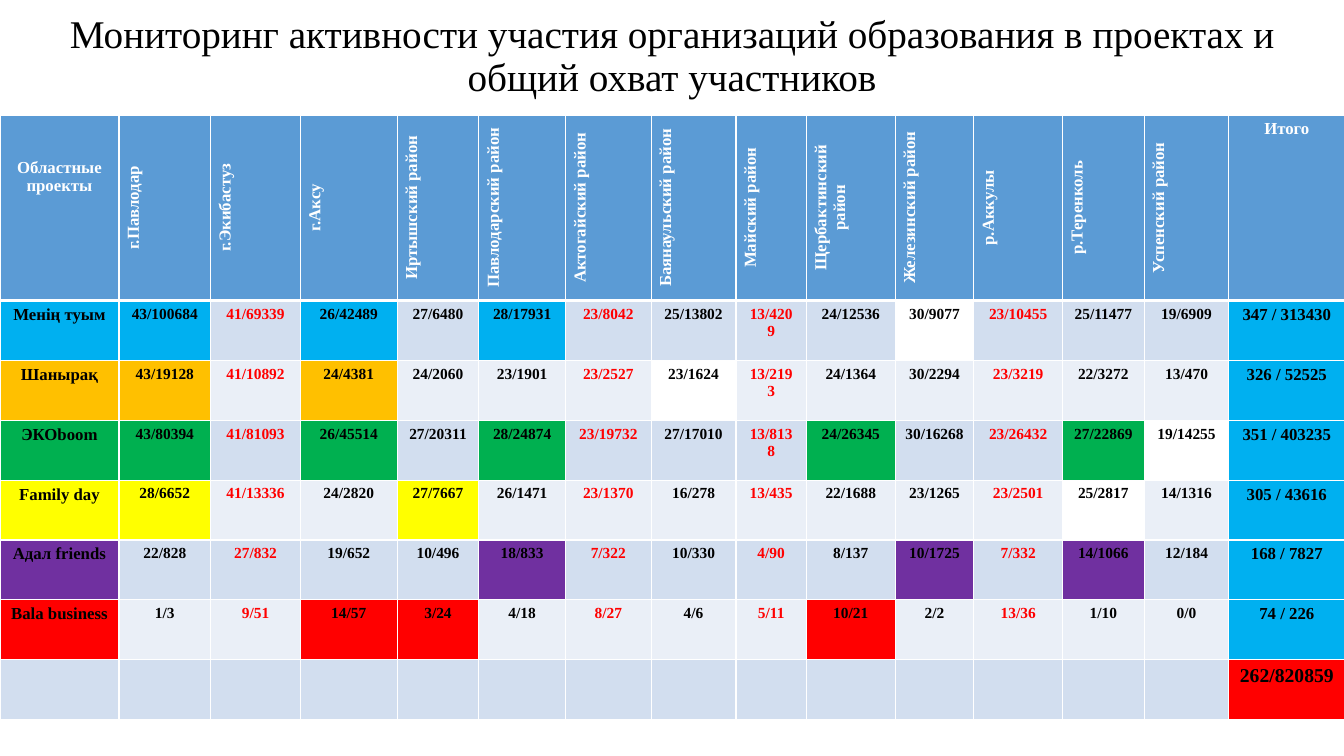
from dataclasses import dataclass

from lxml import etree
from pptx import Presentation
from pptx import util as u
from pptx.dml import color
from pptx.enum import text
from pptx.oxml import ns


@dataclass(frozen=True)
class Theme:
    font: str = "Times New Roman"
    title_size: int = 28
    label_size: int = 12
    value_size: int = 11
    grand_size: int = 14
    black: str = "000000"
    white: str = "FFFFFF"
    red: str = "FF0000"
    header: str = "5B9BD5"
    total: str = "00B0F0"
    bands: tuple = ("D2DEEF", "EAEFF7")


THEME = Theme()
TITLE = "Мониторинг активности участия организаций образования в проектах и общий охват участников"
CORNER = "Областные проекты"
TOTAL = "Итого"
GRAND_TOTAL = "262/820859"
DISTRICTS = [
    "г.Павлодар", "г.Экибастуз", "г.Аксу", "Иртышский район", "Павлодарский район",
    "Актогайский район", "Баянаульский район", "Майский район", "Щербактинский район",
    "Железинский район", "р.Аккулы", "р.Теренколь", "Успенский район",
]
RED_COLUMNS = {2, 6, 8, 11}
COLUMN_WIDTHS = [1.18, 0.91, 0.89, 0.96, 0.81, 0.86, 0.85, 0.84, 0.7, 0.88, 0.78, 0.88, 0.81, 0.84, 1.15]
HEADER_HEIGHT = 1.31
ROW_HEIGHT = 0.594


@dataclass(frozen=True)
class Project:
    name: str
    fill: str
    leaders: set
    blank: set
    values: str
    total: str


PROJECTS = [
    Project("Менің туым", "00B0F0", {1, 3, 5}, {10},
            "43/100684 41/69339 26/42489 27/6480 28/17931 23/8042 25/13802 "
            "13/4209 24/12536 30/9077 23/10455 25/11477 19/6909", "347 / 313430"),
    Project("Шанырақ", "FFC000", {1, 3}, {7},
            "43/19128 41/10892 24/4381 24/2060 23/1901 23/2527 23/1624 "
            "13/2193 24/1364 30/2294 23/3219 22/3272 13/470", "326 / 52525"),
    Project("ЭКОboom", "00B050", {1, 3, 5, 9, 12}, {13},
            "43/80394 41/81093 26/45514 27/20311 28/24874 23/19732 27/17010 "
            "13/8138 24/26345 30/16268 23/26432 27/22869 19/14255", "351 / 403235"),
    Project("Family day", "FFFF00", {1, 4}, {12},
            "28/6652 41/13336 24/2820 27/7667 26/1471 23/1370 16/278 "
            "13/435 22/1688 23/1265 23/2501 25/2817 14/1316", "305 / 43616"),
    Project("Адал friends", "7030A0", {5, 10, 12}, set(),
            "22/828 27/832 19/652 10/496 18/833 7/322 10/330 "
            "4/90 8/137 10/1725 7/332 14/1066 12/184", "168 / 7827"),
    Project("Bala business", "FF0000", {3, 4, 9}, set(),
            "1/3 9/51 14/57 3/24 4/18 8/27 4/6 5/11 10/21 2/2 13/36 1/10 0/0", "74 / 226"),
]


def apply(target, values):
    for name, value in values.items():
        setattr(target, name, value)


def write(frame, wording, size, ink, bold=False):
    para = frame.paragraphs[0]
    para.alignment = text.PP_ALIGN.CENTER
    span = para.add_run()
    span.text = wording
    apply(span.font, {"name": THEME.font, "size": u.Pt(size), "bold": bold})
    span.font.color.rgb = color.RGBColor.from_string(ink)
    return para


def add_title(page):
    box = page.shapes.add_textbox(0, 0, u.Inches(13.33), u.Inches(1.14))
    apply(box.text_frame, {"word_wrap": True, "vertical_anchor": text.MSO_ANCHOR.MIDDLE})
    write(box.text_frame, TITLE, THEME.title_size, THEME.black).line_spacing = 0.9


def add_borders(cell, top, bottom):
    properties = cell._tc.get_or_add_tcPr()
    for side, width in {"L": 1, "R": 1, "T": top, "B": bottom}.items():
        line = etree.SubElement(properties, ns.qn(f"a:ln{side}"), w=str(u.Pt(width)))
        solid = etree.SubElement(line, ns.qn("a:solidFill"))
        etree.SubElement(solid, ns.qn("a:srgbClr"), val=THEME.white)


def fill_cell(cell, fill, wording="", size=THEME.label_size, ink=THEME.black, top=1, bottom=1):
    add_borders(cell, top, bottom)
    if fill:
        cell.fill.solid()
        cell.fill.fore_color.rgb = color.RGBColor.from_string(fill)
    else:
        cell.fill.background()
    if wording:
        write(cell.text_frame, wording, size, ink, bold=True)


def fill_header(table):
    for column, wording in enumerate([CORNER, *DISTRICTS, TOTAL]):
        cell = table.cell(0, column)
        fill_cell(cell, THEME.header, wording, ink=THEME.white, bottom=3)
        if wording in DISTRICTS:
            cell._tc.get_or_add_tcPr().set("vert", "vert270")
    table.cell(0, 0).margin_top = u.Inches(0.43)


def fill_project(table, row, project):
    top = 3 if row == 1 else 1
    band = THEME.bands[(row - 1) % 2]
    fill_cell(table.cell(row, 0), project.fill, project.name, top=top)
    for column, value in enumerate(project.values.split(), 1):
        fill = project.fill if column in project.leaders else band
        if column in project.blank:
            fill = None
        ink = THEME.red if column in RED_COLUMNS else THEME.black
        fill_cell(table.cell(row, column), fill, value, THEME.value_size, ink, top)
    fill_cell(table.cell(row, len(DISTRICTS) + 1), THEME.total, project.total, top=top)


def fill_grand_total(table, row):
    last = len(COLUMN_WIDTHS) - 1
    for column in range(last):
        fill_cell(table.cell(row, column), THEME.bands[0])
    fill_cell(table.cell(row, last), THEME.red, GRAND_TOTAL, THEME.grand_size)


def add_monitoring_table(page):
    heights = [HEADER_HEIGHT] + [ROW_HEIGHT] * (len(PROJECTS) + 1)
    frame = page.shapes.add_table(
        len(heights), len(COLUMN_WIDTHS), 0, u.Inches(1.14),
        u.Inches(sum(COLUMN_WIDTHS)), u.Inches(sum(heights)))
    table = frame.table
    apply(table, {"first_row": False, "horz_banding": False})
    for column, width in zip(table.columns, COLUMN_WIDTHS):
        column.width = u.Inches(width)
    for row, height in zip(table.rows, heights):
        row.height = u.Inches(height)
    fill_header(table)
    for row, project in enumerate(PROJECTS, 1):
        fill_project(table, row, project)
    fill_grand_total(table, len(heights) - 1)


def main():
    deck = Presentation()
    apply(deck, {"slide_width": u.Inches(13.33), "slide_height": u.Inches(7.5)})
    page = deck.slides.add_slide(deck.slide_layouts[6])
    add_title(page)
    add_monitoring_table(page)
    deck.save("out.pptx")


if __name__ == "__main__":
    main()
